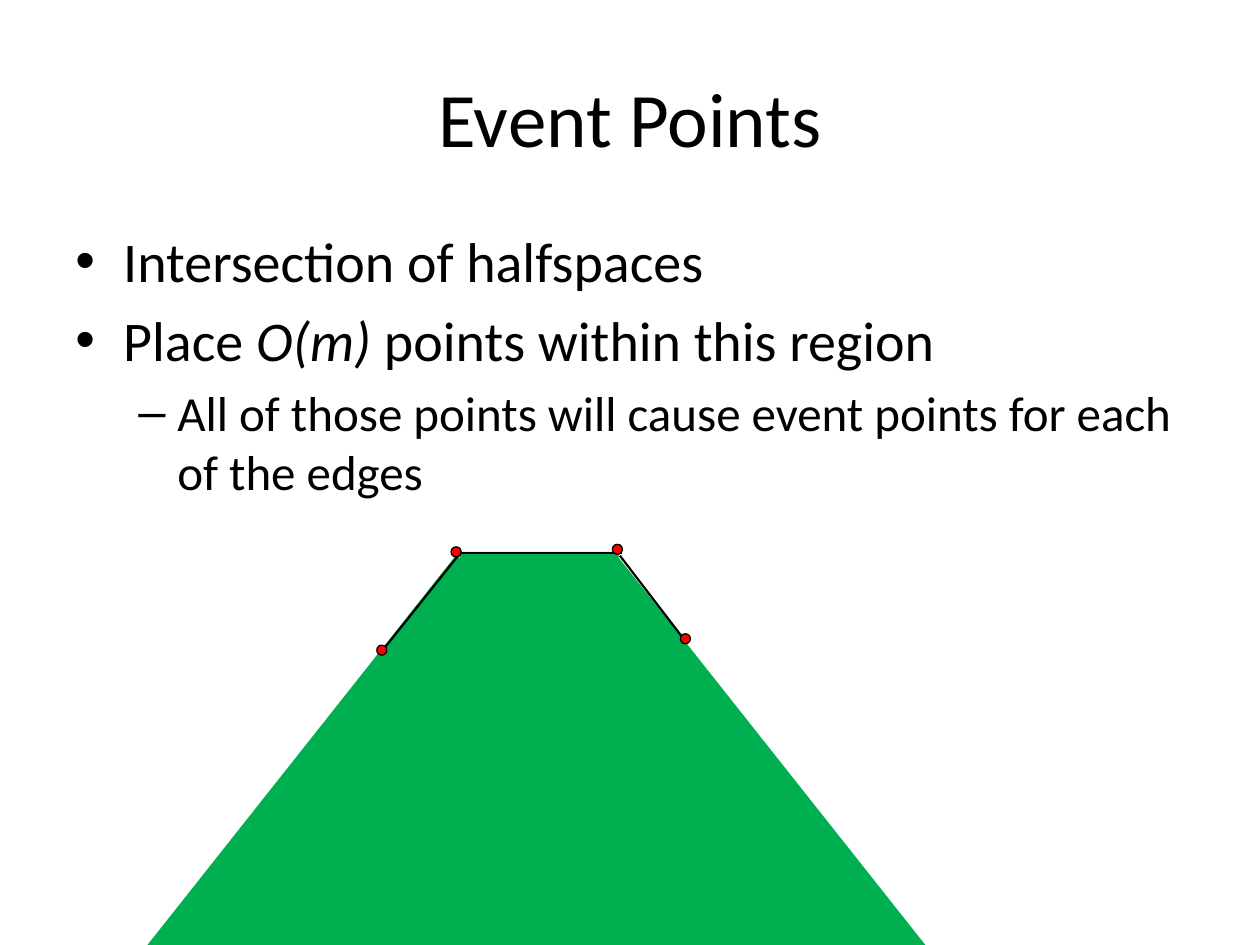
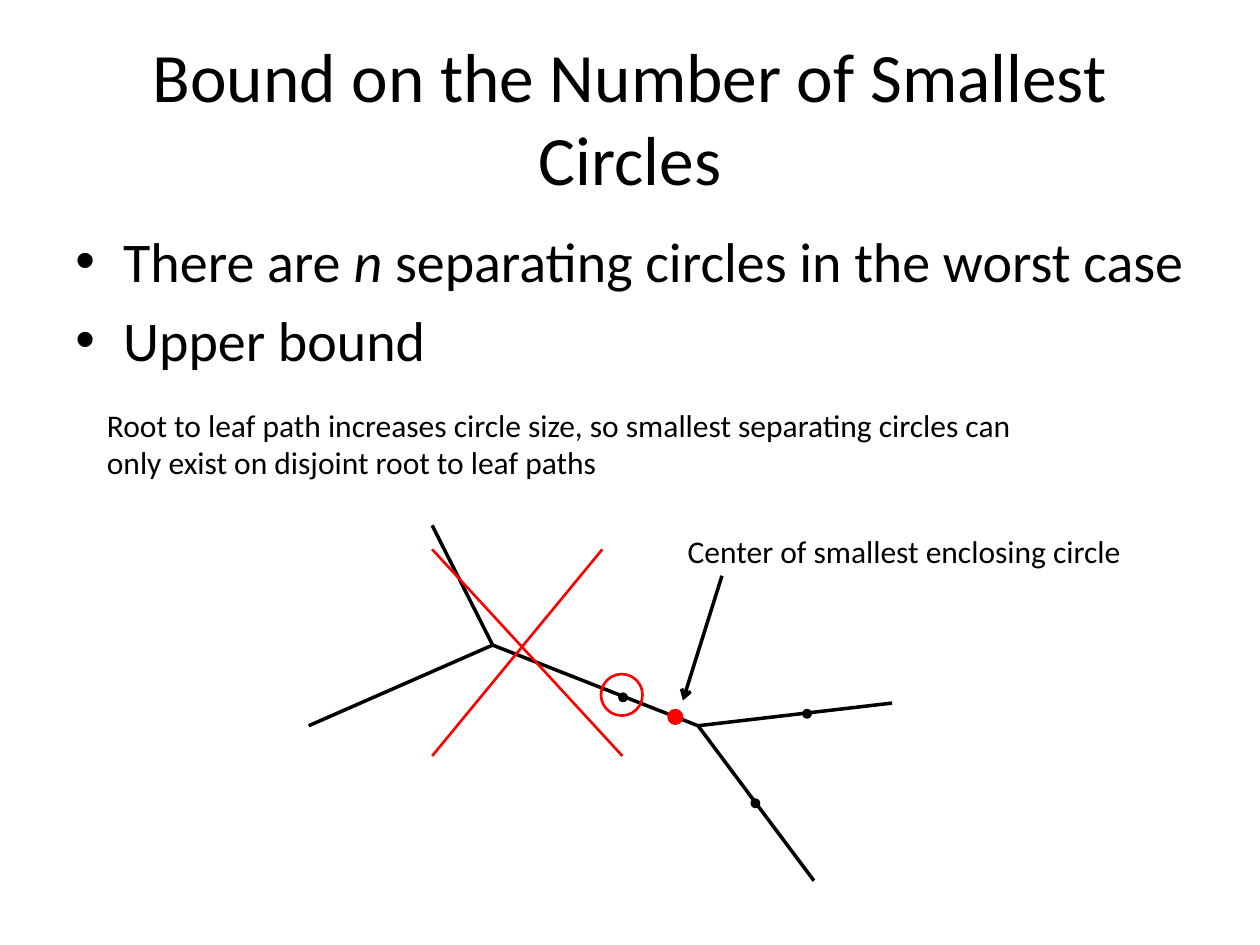
from lxml.etree import SubElement
from pptx import Presentation
from pptx.dml.color import RGBColor
from pptx.enum.shapes import MSO_CONNECTOR, MSO_SHAPE
from pptx.enum.text import MSO_ANCHOR, PP_ALIGN
from pptx.oxml.ns import qn
from pptx.util import Inches, Pt

BLACK, RED, GREEN = "000000", "FF0000", "00B050"
FONT = "Calibri"
TITLE_BOX = (0.5, 0.3, 9, 1.25)
BODY_BOX = (0.5, 1.75, 9, 4.95)
# level: size, left margin, hanging indent, bullet
LEVELS = [(32, 0.38, 0.38, "•"), (28, 0.81, 0.31, "–")]


def paint(shape, fill=None, line=None, width=0):
    """Set fill and outline of a shape or connector, and drop its shadow."""
    if shape._element.tag == qn("p:cxnSp"):
        SubElement(shape._element.spPr, qn("a:effectLst"))
    else:
        shape.shadow.inherit = False
        if fill:
            shape.fill.solid()
            shape.fill.fore_color.rgb = RGBColor.from_string(fill)
        else:
            shape.fill.background()
    if line:
        shape.line.color.rgb = RGBColor.from_string(line)
        shape.line.width = Pt(width)
    else:
        shape.line.fill.background()


def write(slide, box, paragraphs, size=None):
    """Add a text box from (level, text) pairs; *stars* mark italics.

    Without a size, the paragraphs are bullets styled by their level.
    """
    frame = slide.shapes.add_textbox(*map(Inches, box)).text_frame
    frame.word_wrap = True
    for index, (level, text) in enumerate(paragraphs):
        paragraph = frame.add_paragraph() if index else frame.paragraphs[0]
        points = size
        if size is None:
            points, margin, hanging, bullet = LEVELS[level]
            paragraph.level = level
            paragraph.space_before = Pt(points * 0.2)
            properties = paragraph._p.get_or_add_pPr()
            properties.set("marL", str(Inches(margin)))
            properties.set("indent", str(-Inches(hanging)))
            SubElement(properties, qn("a:buFont"), typeface="Arial")
            SubElement(properties, qn("a:buChar"), char=bullet)
        for part, piece in enumerate(text.split("*")):
            run = paragraph.add_run()
            run.text = piece
            run.font.name = FONT
            run.font.size = Pt(points)
            run.font.italic = part % 2 == 1
            run.font.color.rgb = RGBColor.from_string(BLACK)
    return frame


deck = Presentation()
deck.slide_width, deck.slide_height = Inches(10), Inches(7.5)
events, bound = [deck.slides.add_slide(deck.slide_layouts[6]) for _ in range(2)]

# Intersection of halfspaces, behind the text
for kind, box in [
    (MSO_SHAPE.ISOSCELES_TRIANGLE, (2.45, 4.42, 4.91, 3.1)),
    (MSO_SHAPE.RECTANGLE, (3.65, 4.38, 1.26, 1.39)),
    (MSO_SHAPE.ISOSCELES_TRIANGLE, (1.17, 4.4, 4.91, 3.1)),
]:
    paint(events.shapes.add_shape(kind, *map(Inches, box)), GREEN)

# Titles and bullets
for slide, title, title_size, bullets in [
    (events, "Event Points", 44, [
        (0, "Intersection of halfspaces"),
        (0, "Place *O(m)* points within this region"),
        (1, "All of those points will cause event points for each of the edges"),
    ]),
    (bound, "Bound on the Number of Smallest Circles", 39.6, [
        (0, "There are *n* separating circles in the worst case"),
        (0, "Upper bound"),
    ]),
]:
    heading = write(slide, TITLE_BOX, [(0, title)], title_size)
    heading.vertical_anchor = MSO_ANCHOR.MIDDLE
    heading.paragraphs[0].alignment = PP_ALIGN.CENTER
    write(slide, BODY_BOX, bullets)

# Region edges, tree branches, the cross over the pruned subtree, the pointer
left_fork, right_fork = (3.91, 5.12), (5.54, 5.76)
for slide, color, width, segments in [
    (events, BLACK, 1.25, [
        ((3.65, 4.39), (4.94, 4.39)),
        ((3.66, 4.38), (3.03, 5.17)),
        ((4.92, 4.41), (5.41, 5.05)),
    ]),
    (bound, BLACK, 2, [
        ((3.43, 4.17), left_fork),
        (left_fork, right_fork),
        (right_fork, (7.08, 5.58)),
        (right_fork, (6.46, 6.99)),
        (left_fork, (2.45, 5.76)),
    ]),
    (bound, RED, 1.5, [
        ((3.43, 4.36), (4.94, 6)),
        ((4.78, 4.36), (3.43, 6)),
    ]),
    (bound, BLACK, 2, [((5.73, 4.57), (5.42, 5.56))]),
]:
    for start, end in segments:
        segment = slide.shapes.add_connector(
            MSO_CONNECTOR.STRAIGHT, *map(Inches, start + end))
        paint(segment, line=color, width=width)
pointer = segment
SubElement(pointer.line._get_or_add_ln(), qn("a:tailEnd"), type="arrow")

# Event points, separating circle centers, and the enclosing circle's center
for slide, diameter, fill, line, width, corners in [
    (events, 0.08, RED, BLACK, 0.75,
     [(2.99, 5.12), (3.58, 4.34), (4.86, 4.32), (5.4, 5.03)]),
    (bound, 0.05, BLACK, BLACK, 2, [(4.92, 5.51), (5.97, 6.35), (6.38, 5.64)]),
    (bound, 0.33, None, RED, 1.5, [(4.77, 5.35)]),
    (bound, 0.1, RED, RED, 2, [(5.31, 5.64)]),
]:
    for left, top in corners:
        point = slide.shapes.add_shape(
            MSO_SHAPE.OVAL, *map(Inches, (left, top, diameter, diameter)))
        paint(point, fill, line, width)

write(bound, (5.36, 4.17, 4.54, 0.4),
      [(0, "Center of smallest enclosing circle")], 18)
write(bound, (0.75, 3.17, 7.58, 0.71),
      [(0, "Root to leaf path increases circle size, so smallest separating "
           "circles can only exist on disjoint root to leaf paths")], 18)

deck.save("out.pptx")
